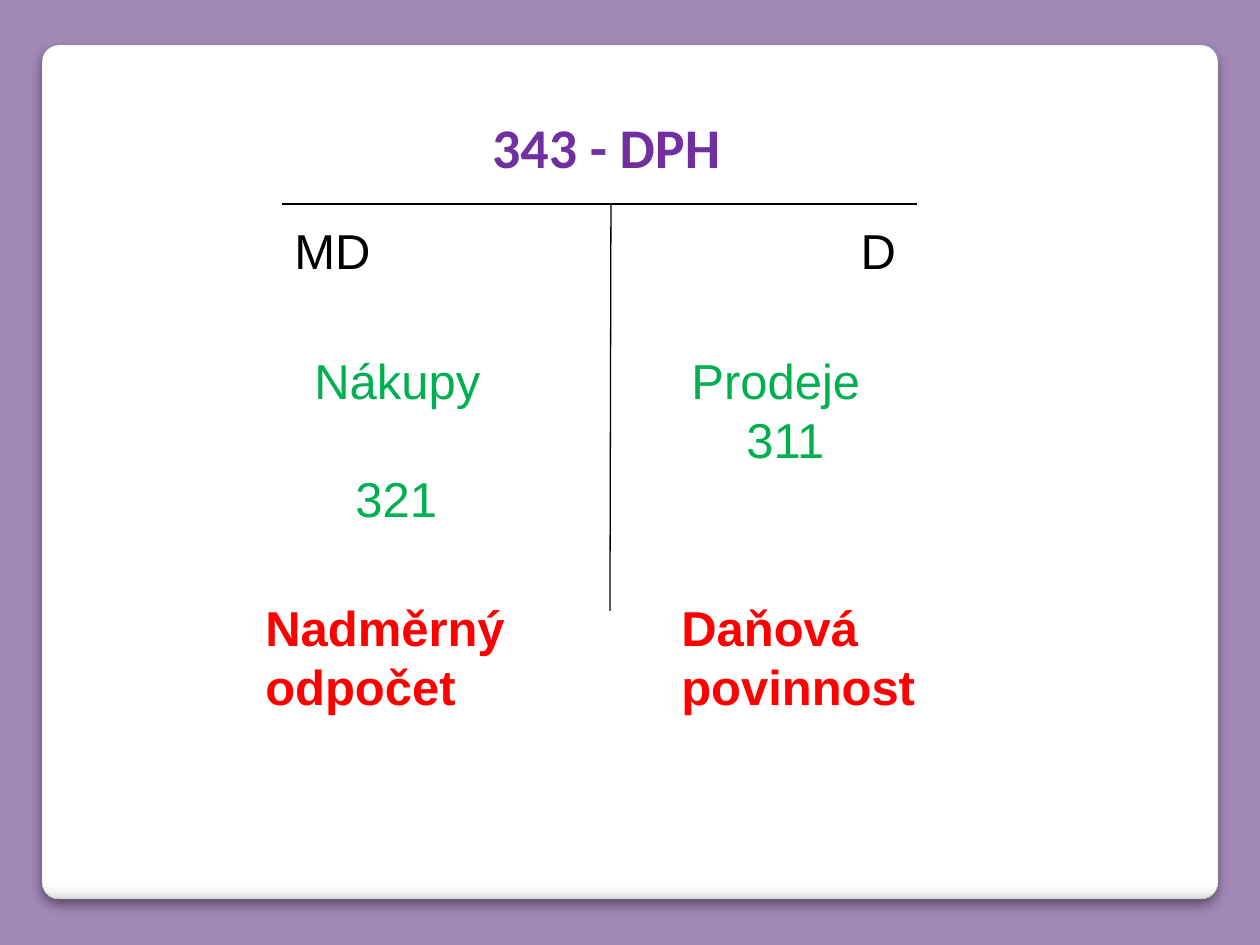
from lxml import etree
from pptx import Presentation
from pptx.dml.color import RGBColor
from pptx.enum.shapes import MSO_CONNECTOR, MSO_SHAPE
from pptx.enum.text import MSO_ANCHOR, MSO_AUTO_SIZE, PP_ALIGN
from pptx.oxml.ns import qn
from pptx.util import Emu, Pt

COLORS = {
    "back": "A088B7", "white": "FFFFFF", "edge": "A4A4A4", "black": "000000",
    "title": "7030A0", "entry": "00B050", "result": "FF0000",
}
# Card shading: position in percent and colour
STOPS = [(0, "FFFFFF"), (98, "FFFFFF"), (99, "F7F7F7"), (100, "DADADA")]


def px(n):
    return Emu(round(n * 914400 / 126))


def rgb(name):
    return RGBColor.from_string(COLORS[name])


def style(item, values):
    for name, value in values.items():
        setattr(item, name, value)


def tint(parent, code, alpha=100):
    color = etree.SubElement(parent, qn("a:srgbClr"), val=code)
    if alpha < 100:
        etree.SubElement(color, qn("a:alpha"), val=str(alpha * 1000))


class Deck:
    font = {"name": "Arial", "size": Pt(28)}

    def __init__(self):
        self.prs = Presentation()
        style(self.prs, {"slide_width": px(1260), "slide_height": px(945)})
        self.slide = self.prs.slides.add_slide(self.prs.slide_layouts[5])
        self.shapes = self.slide.shapes
        fill = self.slide.background.fill
        fill.solid()
        fill.fore_color.rgb = rgb("back")

    def card(self, x, y, w, h):
        card = self.shapes.add_shape(
            MSO_SHAPE.ROUNDED_RECTANGLE, *map(px, (x, y, w, h)))
        card.adjustments[0] = 0.02
        card.line.color.rgb = rgb("edge")
        card.line.width = Pt(0.16)
        card.fill.gradient()
        card.fill.gradient_angle = 270
        stops = card._element.spPr.find(".//" + qn("a:gsLst"))
        for old in list(stops):
            stops.remove(old)
        for pos, code in STOPS:
            tint(etree.SubElement(stops, qn("a:gs"), pos=str(pos * 1000)), code)
        card.shadow.inherit = False
        shade = etree.SubElement(
            card._element.spPr.find(qn("a:effectLst")), qn("a:outerShdw"),
            blurRad=str(Pt(6)), dist=str(Pt(4)), dir="5400000",
            algn="tl", rotWithShape="0")
        tint(shade, COLORS["black"], 44)
        # Place the card behind the title
        self.shapes._spTree.insert(2, card._element)

    def title(self, text, x, y, w, h):
        box = self.shapes.title
        style(box, {"left": px(x), "top": px(y), "width": px(w), "height": px(h)})
        box.fill.solid()
        box.fill.fore_color.rgb = rgb("white")
        box.line.color.rgb = rgb("white")
        frame = box.text_frame
        frame.text = text
        style(frame, {"auto_size": MSO_AUTO_SIZE.NONE, "margin_left": px(35),
                      "vertical_anchor": MSO_ANCHOR.TOP})
        para = frame.paragraphs[0]
        para.alignment = PP_ALIGN.CENTER
        style(para.font, {"name": "Calibri", "size": Pt(32), "bold": True})
        para.font.color.rgb = rgb("title")

    def line(self, *ends):
        line = self.shapes.add_connector(MSO_CONNECTOR.STRAIGHT, *map(px, ends))
        line.line.color.rgb = rgb("black")
        line.line.width = Pt(0.75)
        etree.SubElement(line._element.spPr, qn("a:effectLst"))

    def text(self, lines, x, y, w, h, color="black", bold=False,
             align=PP_ALIGN.LEFT, right=12, indent=0, gap=0):
        frame = self.shapes.add_textbox(*map(px, (x, y, w, h))).text_frame
        style(frame, {"word_wrap": True, "margin_right": px(right),
                      "auto_size": MSO_AUTO_SIZE.SHAPE_TO_FIT_TEXT})
        for i, line in enumerate(lines):
            para = frame.add_paragraph() if i else frame.paragraphs[0]
            para.text = line
            para.alignment = align
            if i:
                para.space_before = Pt(gap)
                para._p.get_or_add_pPr().set("marL", str(px(indent)))
            style(para.font, {**self.font, "bold": bold})
            para.font.color.rgb = rgb(color)


def main():
    deck = Deck()
    deck.card(42, 45, 1176, 854)

    # T account with its heading
    deck.title("343 - DPH", 302, 106, 586, 69)
    deck.line(282, 204, 917, 204)
    deck.line(611, 204, 610, 611)

    # Debit and credit sides
    deck.text(["MD"], 282, 214, 129, 72)
    deck.text(["D"], 699, 214, 217, 72, align=PP_ALIGN.RIGHT, right=20)

    # Entries
    deck.text(["Nákupy", "321"], 302, 344, 198, 131, "entry", indent=41, gap=34)
    deck.text(["Prodeje", "311"], 679, 344, 198, 131, "entry", indent=55)

    # Resulting balances
    for x, label in ((253, "Nadměrný odpočet"), (669, "Daňová povinnost")):
        deck.text([label], x, 591, 338, 131, "result", bold=True)

    deck.prs.save("out.pptx")


if __name__ == "__main__":
    main()
